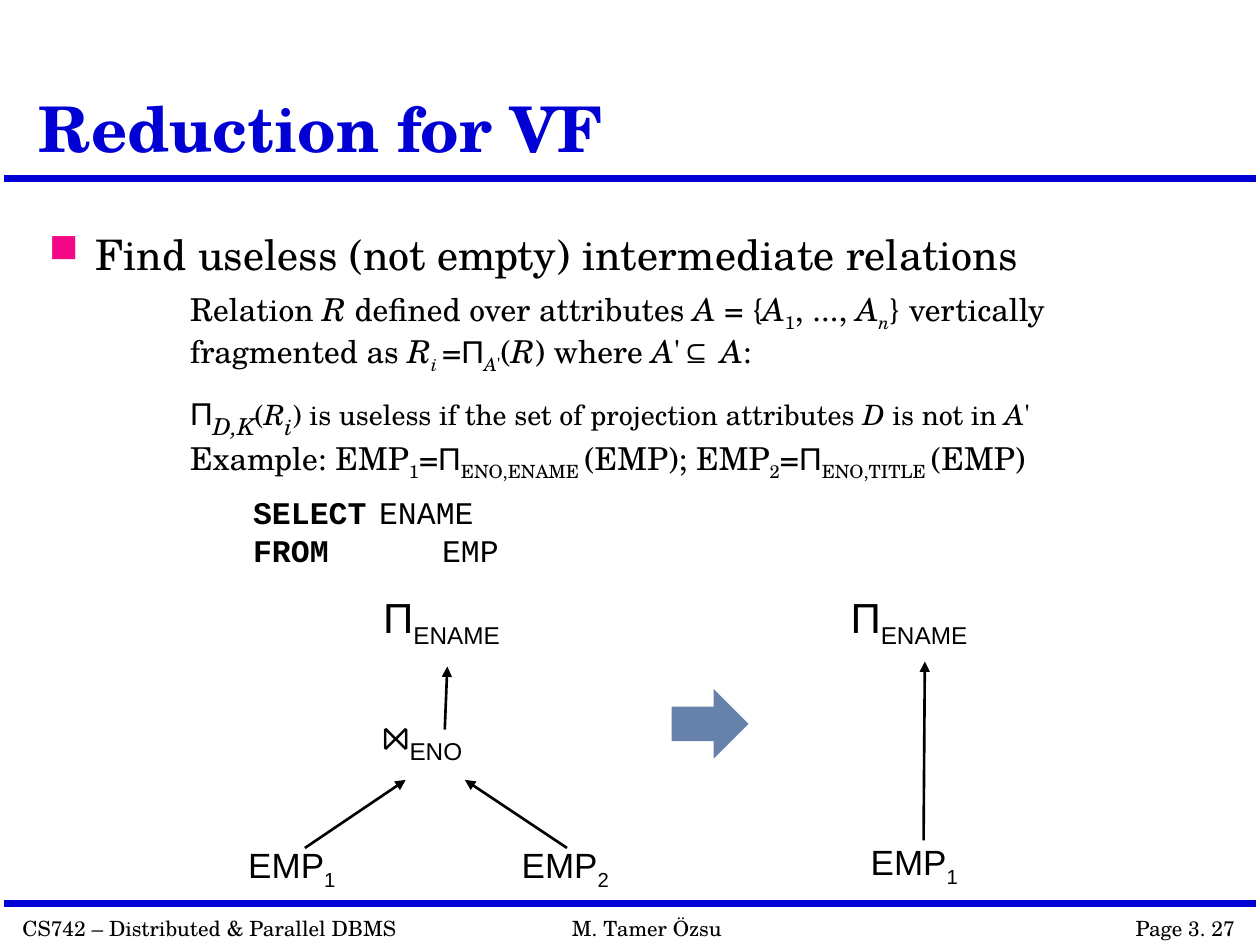
from lxml import etree
from pptx import Presentation
from pptx import util as u
from pptx.dml.color import RGBColor
from pptx.enum import shapes, text
from pptx.oxml.ns import qn

HUES = {"blue": "0000D4", "pink": "F20884", "steel": "6682AA", "black": "000000"}
FONTS = {"s": "TeX Gyre Schola", "a": "Arial", "m": "Courier New", "c": "Cambria"}

# Each piece is (words, flags, size); flags: font key, i italic, b bold, _ subscript.
HEAD = [("Find useless (not empty) intermediate relations", "s")]
RULE = [
    ("Relation ", "s"), ("R", "si"), (" defined over attributes ", "s"), ("A", "si"),
    (" = {", "s"), ("A", "si"), ("1", "s_"), (", ..., ", "s"), ("A", "si"), ("n", "si_"),
    ("} vertically fragmented as ", "s"), ("R", "si"), ("i ", "si_"), ("=", "s"),
    ("Π", "a"), ("A", "si_"), ("'", "s_"), ("(", "s"), ("R", "si"), (") where ", "s"),
    ("A", "si"), ("'", "s"), ("⊆ ", "a"), ("A", "si"), (":", "s"),
]
TEST = [
    ("Π", "a", 18), ("D,K", "si_", 23), ("(", "s"), ("R", "si"), ("i", "si_", 23),
    (") is useless if the set of projection attributes ", "s"), ("D", "si"),
    (" is not in ", "s"), ("A", "si"), ("'", "s"),
]
CASE = [
    ("Example: EMP", "s"), ("1", "s_"), ("=", "s"), ("Π", "a"), ("ENO,ENAME ", "s_"),
    ("(EMP); EMP", "s"), ("2", "s_"), ("=", "s"), ("Π", "a"), ("ENO,TITLE ", "s_"),
    ("(EMP)", "s"),
]
PICK = [("\tSELECT", "mb"), ("\tENAME", "m")]
FROM = [("\tFROM", "mb"), ("\t\tEMP", "m")]
BODY = [(HEAD, 24, 29, 7), (RULE, 18, 24, 6), (TEST, 16, None, 0),
        (CASE, 18, 24, 6), (PICK, 18, None, 0), (FROM, 18, None, 0)]


def hue(name):
    """Return a named colour."""
    return RGBColor.from_string(HUES[name])


def write(para, parts, size, tint="black"):
    """Fill a paragraph with styled runs."""
    for words, flags, *own in parts:
        run = para.add_run()
        run.text = words
        font = run.font
        font.name = FONTS[flags[0]]
        font.size = u.Pt(own[0] if own else size)
        font.color.rgb = hue(tint)
        font.italic = "i" in flags
        font.bold = "b" in flags
        if "_" in flags:
            run._r.get_or_add_rPr().set("baseline", "-25000")


def box(slide, at, wrap=False, pad=True):
    """Add an empty text box and return its frame."""
    frame = slide.shapes.add_textbox(*map(u.Inches, at)).text_frame
    frame.word_wrap = wrap
    if not wrap:
        frame.auto_size = text.MSO_AUTO_SIZE.SHAPE_TO_FIT_TEXT
    if not pad:
        frame.margin_left = frame.margin_right = 0
        frame.margin_top = frame.margin_bottom = 0
    return frame


def label(slide, at, parts, size, lead, wrap=False):
    """Add a tree node label without margins."""
    para = box(slide, at, wrap, pad=False).paragraphs[0]
    para.line_spacing = u.Pt(lead)
    write(para, parts, size)


def line(slide, start, end, tint="black", width=1.5, arrow=True):
    """Draw a straight line, with an arrowhead at its end if asked."""
    link = slide.shapes.add_connector(
        shapes.MSO_CONNECTOR.STRAIGHT, *map(u.Inches, start + end))
    link.line.color.rgb = hue(tint)
    link.line.width = u.Pt(width)
    if arrow:
        etree.SubElement(link.line._get_or_add_ln(), qn("a:tailEnd"), type="triangle")
    etree.SubElement(link._element.spPr, qn("a:effectLst"))


def bullet(para):
    """Give a paragraph a pink square bullet."""
    props = para._p.get_or_add_pPr()
    props.set("marL", str(u.Inches(0.37)))
    props.set("indent", str(u.Inches(-0.37)))
    tint = etree.SubElement(props, qn("a:buClr"))
    etree.SubElement(tint, qn("a:srgbClr"), val=HUES["pink"])
    etree.SubElement(props, qn("a:buSzPct"), val="95000")
    etree.SubElement(props, qn("a:buChar"), char="■")


def frame(slide):
    """Add the rules, the footer and the title."""
    for y in (1.42, 7.17):
        line(slide, (0.03, y), (9.97, y), "blue", 4, False)
    for left, wide, words in ((0.08, 3.2, "CS742 – Distributed & Parallel DBMS"),
                              (4.44, 1.39, "M. Tamer Özsu"), (8.9, 1, "Page 3. 27")):
        para = box(slide, (left, 7.22, wide, 0.3)).paragraphs[0]
        write(para, [(words, "s")], 12)
    para.alignment = text.PP_ALIGN.RIGHT
    title = box(slide, (0.21, 0.12, 7.83, 1.25), True)
    title.vertical_anchor = text.MSO_ANCHOR.BOTTOM
    title.paragraphs[0].line_spacing = 0.9
    write(title.paragraphs[0], [("Reduction for VF", "sb")], 36, "blue")


def body(slide):
    """Add the bullet, its details and the query."""
    area = box(slide, (0.29, 1.76, 9.45, 3.05), True)
    for n, (parts, size, lead, after) in enumerate(BODY):
        para = area.add_paragraph() if n else area.paragraphs[0]
        para.space_after = u.Pt(after)
        if lead:
            para.line_spacing = u.Pt(lead)
        if n:
            para.level = 1
            para._p.get_or_add_pPr().set("marL", str(u.Inches(1.12)))
        else:
            bullet(para)
        write(para, parts, size)


def trees(slide):
    """Add both query trees and the arrow between them."""
    for left, top, mark in ((1.97, 6.74, "1"), (4.14, 6.74, "2"), (6.91, 6.72, "1")):
        label(slide, (left, top, 0.71, 0.34), [("EMP", "a"), (mark, "a_")], 20, 24)
    for left in (3.04, 6.75):
        label(slide, (left, 4.75, 1.05, 0.4), [("Π", "a"), ("ENAME", "a_")], 24, 29)
    label(slide, (3.03, 5.77, 0.89, 0.33), [("⋈", "c", 25), ("ENO", "a_")], 24, 22, True)
    for start, end in (((2.42, 6.73), (3.22, 6.19)), ((4.5, 6.73), (3.69, 6.19)),
                       ((3.53, 5.79), (3.55, 5.29)), ((7.33, 6.67), (7.34, 5.25))):
        line(slide, start, end)
    arrow = slide.shapes.add_shape(
        shapes.MSO_SHAPE.RIGHT_ARROW, *map(u.Inches, (5.33, 5.47, 0.61, 0.55)))
    arrow.shadow.inherit = False
    arrow.fill.solid()
    arrow.fill.fore_color.rgb = hue("steel")
    arrow.line.fill.background()


def main():
    """Build and save the slide."""
    deck = Presentation()
    deck.slide_width, deck.slide_height = u.Inches(10), u.Inches(7.5)
    slide = deck.slides.add_slide(deck.slide_layouts[6])
    frame(slide)
    body(slide)
    trees(slide)
    deck.save("out.pptx")


if __name__ == "__main__":
    main()
